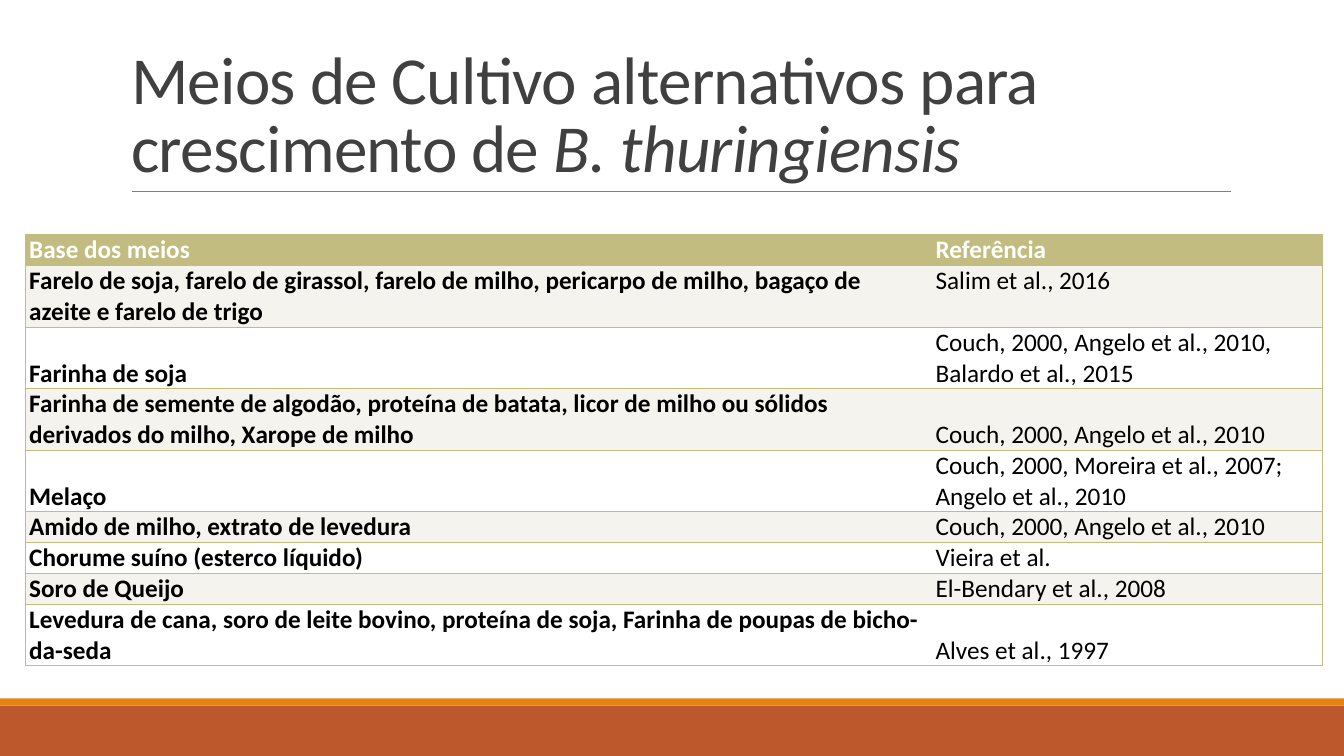
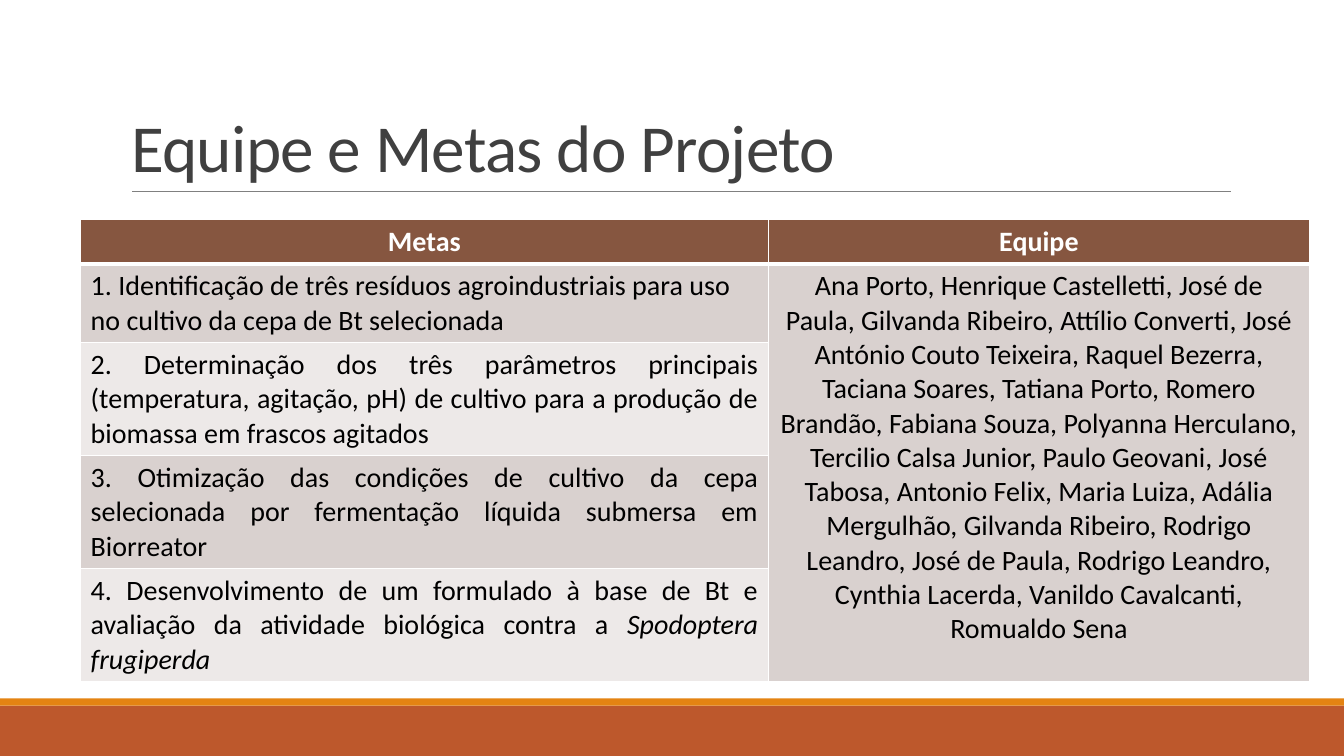
"""Builds two slides on culture media and on the goals and team of a project."""
from lxml import etree
from pptx import Presentation
from pptx.dml.color import RGBColor
from pptx.enum.shapes import MSO_CONNECTOR, MSO_SHAPE
from pptx.enum.text import MSO_ANCHOR, MSO_AUTO_SIZE, PP_ALIGN
from pptx.oxml.ns import qn
from pptx.util import Inches, Pt

LEFT, MID, JUST = PP_ALIGN.LEFT, PP_ALIGN.CENTER, PP_ALIGN.JUSTIFY
TOP, BASE = MSO_ANCHOR.TOP, MSO_ANCHOR.BOTTOM
RECT, LINE = MSO_SHAPE.RECTANGLE, MSO_CONNECTOR.STRAIGHT


class Theme:
    font = "Calibri"
    title, media, goals = 48, 18, 20
    ink, text, white = "404040", "000000", "FFFFFF"
    rust, amber, rule = "BD582C", "E48312", "808080"
    olive, cream = "C2BC80", "F4F3ED"
    brown, rose, pale = "865640", "D9D1CF", "EDE9E8"


def write(frame, text, size, color=Theme.text, bold=False, align=LEFT, space=None, track=None):
    """Write text in which asterisks enclose italics."""
    para = frame.paragraphs[0]
    para.alignment = align
    para.line_spacing = space
    for i, part in enumerate(text.split("*")):
        if not part:
            continue
        run = para.add_run()
        run.text = part
        font = run.font
        font.name, font.size, font.bold = Theme.font, Pt(size), bold
        font.color.rgb = RGBColor.from_string(color)
        if i % 2:
            font.italic = True
        if track:
            run._r.get_or_add_rPr().set("spc", str(track))


def edge(cell, color, widths):
    """Draw the cell borders; a side without a width stays bare."""
    props = cell._tc.get_or_add_tcPr()
    for side in "LRTB":
        wide = widths.get(side, 0)
        line = etree.SubElement(props, qn(f"a:ln{side}"), w=str(Pt(wide)))
        if wide:
            fill = etree.SubElement(line, qn("a:solidFill"))
            etree.SubElement(fill, qn("a:srgbClr"), val=color)
        else:
            etree.SubElement(line, qn("a:noFill"))


MEDIA = [
    ("Base dos meios", "Referência"),
    ("Farelo de soja, farelo de girassol, farelo de milho, pericarpo de milho, "
     "bagaço de azeite e farelo de trigo", "Salim et al., 2016"),
    ("Farinha de soja", "Couch, 2000, Angelo et al., 2010, Balardo et al., 2015"),
    ("Farinha de semente de algodão, proteína de batata, licor de milho ou sólidos "
     "derivados do milho, Xarope de milho", "Couch, 2000, Angelo et al., 2010"),
    ("Melaço", "Couch, 2000, Moreira et al., 2007; Angelo et al., 2010"),
    ("Amido de milho, extrato de levedura", "Couch, 2000, Angelo et al., 2010"),
    ("Chorume suíno (esterco líquido)", "Vieira et al."),
    ("Soro de Queijo", "El-Bendary et al., 2008"),
    ("Levedura de cana, soro de leite bovino, proteína de soja, Farinha de poupas "
     "de bicho-da-seda", "Alves et al., 1997"),
]
TEAM = (
    "Ana Porto, Henrique Castelletti, José de Paula, Gilvanda Ribeiro, Attílio Converti, "
    "José António Couto Teixeira, Raquel Bezerra, Taciana Soares, Tatiana Porto, "
    "Romero Brandão, Fabiana Souza, Polyanna Herculano, Tercilio Calsa Junior, "
    "Paulo Geovani, José Tabosa, Antonio Felix, Maria Luiza, Adália Mergulhão, "
    "Gilvanda Ribeiro, Rodrigo Leandro, José de Paula, Rodrigo Leandro, "
    "Cynthia Lacerda, Vanildo Cavalcanti, Romualdo Sena"
)
GOALS = [
    ("Metas", "Equipe"),
    ("1. Identificação de três resíduos agroindustriais para uso no cultivo da cepa "
     "de Bt selecionada", TEAM),
    ("2. Determinação dos três parâmetros principais (temperatura, agitação, pH) de "
     "cultivo para a produção de biomassa em frascos agitados", ""),
    ("3. Otimização das condições de cultivo da cepa selecionada por fermentação "
     "líquida submersa em Biorreator", ""),
    ("4. Desenvolvimento de um formulado à base de Bt e avaliação da atividade "
     "biológica contra a *Spodoptera frugiperda*", ""),
]
TITLES = [
    "Meios de Cultivo alternativos para crescimento de *B. thuringiensis*",
    "Equipe e Metas do Projeto",
]
PLANS = [
    (MEDIA, 0.25, 2.33, (8.99, 3.88), (0.3, 0.61, 0.61, 0.61, 0.61, 0.3, 0.3, 0.3, 0.61)),
    (GOALS, 0.8, 2.18, (6.82, 5.37), (0.43, 0.78, 1.12, 1.12, 1.12)),
]

deck = Presentation()
deck.slide_width, deck.slide_height = Inches(13.33), Inches(7.5)
tables = []

for title, (rows, left, top, wides, highs) in zip(TITLES, PLANS):
    slide = deck.slides.add_slide(deck.slide_layouts[5])
    for y, high, color in ((7, 0.5, Theme.rust), (6.93, 0.07, Theme.amber)):
        band = slide.shapes.add_shape(RECT, 0, Inches(y), deck.slide_width, Inches(high))
        band.shadow.inherit = False
        band.fill.solid()
        band.fill.fore_color.rgb = RGBColor.from_string(color)
        band.line.fill.background()
    rule = slide.shapes.add_connector(LINE, Inches(1.31), Inches(1.9), Inches(12.21), Inches(1.9))
    rule.line.color.rgb = RGBColor.from_string(Theme.rule)
    rule.line.width = Pt(0.5)
    etree.SubElement(rule._element.spPr, qn("a:effectLst"))

    head = slide.shapes.title
    head.left, head.top, head.width, head.height = map(Inches, (1.2, 0.31, 11, 1.59))
    frame = head.text_frame
    frame.word_wrap, frame.auto_size = True, MSO_AUTO_SIZE.NONE
    frame.vertical_anchor = BASE
    write(frame, title, Theme.title, color=Theme.ink, space=0.85, track=-50)

    table = slide.shapes.add_table(
        len(rows), len(wides), Inches(left), Inches(top),
        Inches(sum(wides)), Inches(sum(highs))).table
    table.horz_banding = False
    for col, wide in zip(table.columns, wides):
        col.width = Inches(wide)
    for row, high in zip(table.rows, highs):
        row.height = Inches(high)
    tables.append(table)

media, goals = tables
for r, row in enumerate(MEDIA):
    for c, text in enumerate(row):
        cell = media.cell(r, c)
        cell.margin_left = cell.margin_right = Inches(0.04)
        cell.margin_top = cell.margin_bottom = 0
        cell.vertical_anchor = TOP if r == 1 else BASE
        edge(cell, Theme.olive, {"T": 1, "B": 1, "LR"[c]: 1})
        fill = Theme.olive if r == 0 else (Theme.white, Theme.cream)[r % 2]
        cell.fill.solid()
        cell.fill.fore_color.rgb = RGBColor.from_string(fill)
        write(cell.text_frame, text, Theme.media, bold=r == 0 or c == 0,
              color=Theme.text if r else Theme.white)

goals.cell(1, 1).merge(goals.cell(4, 1))
for r, row in enumerate(GOALS):
    for c, text in enumerate(row):
        cell = goals.cell(r, c)
        edge(cell, Theme.white, {"L": 1, "R": 1, "T": 3 if r == 1 else 1, "B": 1 if r else 3})
        fill = Theme.brown if r == 0 else Theme.rose if c or r % 2 else Theme.pale
        cell.fill.solid()
        cell.fill.fore_color.rgb = RGBColor.from_string(fill)
        align = MID if r == 0 or c else LEFT if r == 1 else JUST
        write(cell.text_frame, text, Theme.goals, bold=r == 0, align=align,
              color=Theme.text if r else Theme.white)

deck.save("out.pptx")
